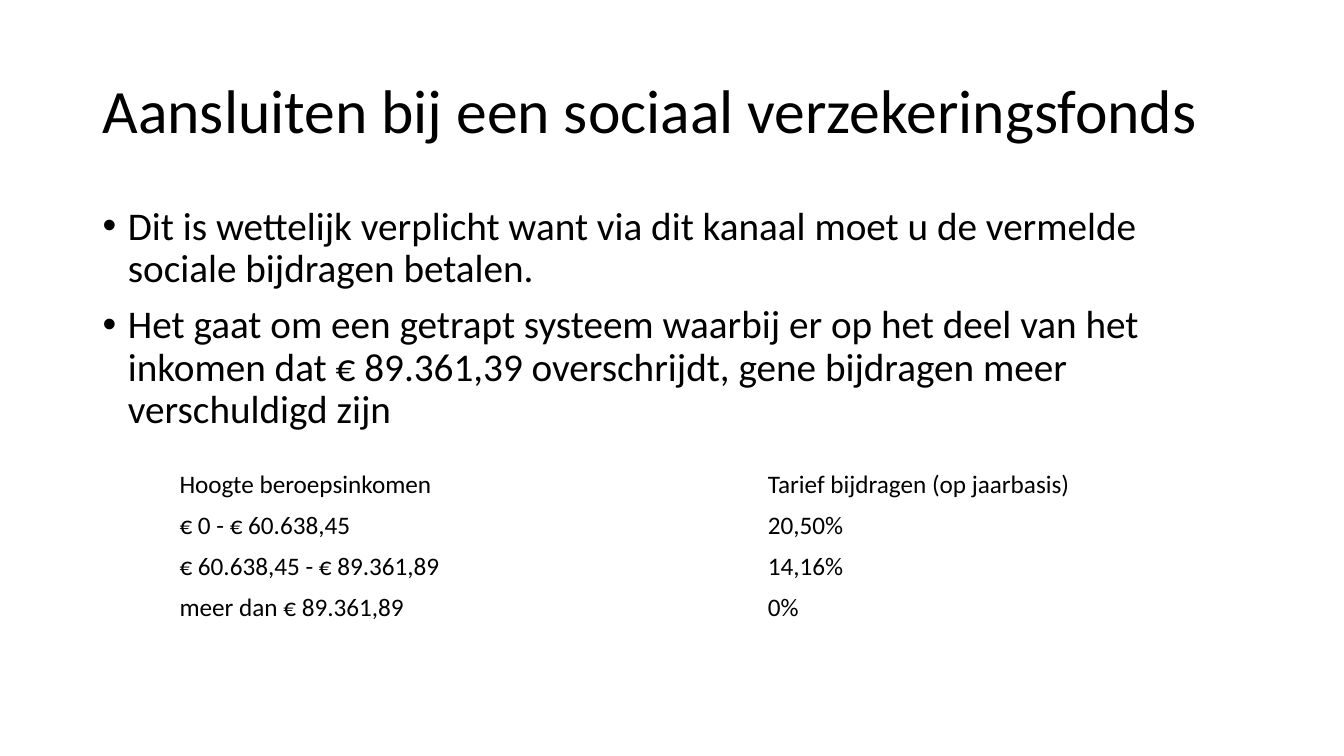
from pptx import Presentation
from pptx.dml.color import RGBColor
from pptx.enum.text import MSO_ANCHOR as Anchor, MSO_AUTO_SIZE as AutoSize, PP_ALIGN as Align
from pptx.util import Cm, Pt


def write(frame, text, size, color="000000", font="Calibri", anchor=Anchor.MIDDLE,
          spacing=1.0, before=0, hanging=None):
    frame.word_wrap = True
    frame.vertical_anchor = anchor
    frame.text = text
    for para in frame.paragraphs:
        para.alignment = Align.LEFT
        para.line_spacing = spacing
        para.space_before = Pt(before)
        if hanging is not None:
            properties = para._p.get_or_add_pPr()
            properties.set("marL", str(hanging))
            properties.set("indent", str(-hanging))
        for span in para.runs:
            span.font.name = font
            span.font.size = Pt(size)
            span.font.bold = False
            span.font.color.rgb = RGBColor.from_string(color)


deck = Presentation()
deck.slide_width, deck.slide_height = Cm(33.87), Cm(19.05)
page = deck.slides.add_slide(deck.slide_layouts[1])

title, body = page.placeholders
for box, top, height in ((title, 1.01, 3.68), (body, 5.07, 12.09)):
    box.left, box.top, box.width, box.height = Cm(2.33), Cm(top), Cm(29.21), Cm(height)
    box.text_frame.auto_size = AutoSize.NONE

write(title.text_frame, "Aansluiten bij een sociaal verzekeringsfonds", 44, spacing=0.9)

points = [
    "Dit is wettelijk verplicht want via dit kanaal moet u de vermelde sociale bijdragen betalen.",
    "Het gaat om een getrapt systeem waarbij er op het deel van het inkomen dat € 89.361,39 "
    "overschrijdt, gene bijdragen meer verschuldigd zijn",
]
write(body.text_frame, "\n".join(points), 28, anchor=Anchor.TOP, spacing=0.9, before=10,
      hanging=Cm(0.64))

rates = [
    ("Hoogte beroepsinkomen", "Tarief bijdragen (op jaarbasis)"),
    ("€ 0 - € 60.638,45", "20,50%"),
    ("€ 60.638,45 - € 89.361,89", "14,16%"),
    ("meer dan € 89.361,89", "0%"),
]
table = page.shapes.add_table(len(rates), 2, Cm(4.27), Cm(11.71), Cm(29.65), Cm(4)).table
table.first_row = False
table.horz_banding = False
for row, texts in enumerate(rates):
    for column, text in enumerate(texts):
        cell = table.cell(row, column)
        cell.fill.background()
        cell.vertical_anchor = Anchor.MIDDLE
        write(cell.text_frame, text, 18)

deck.save("out.pptx")
